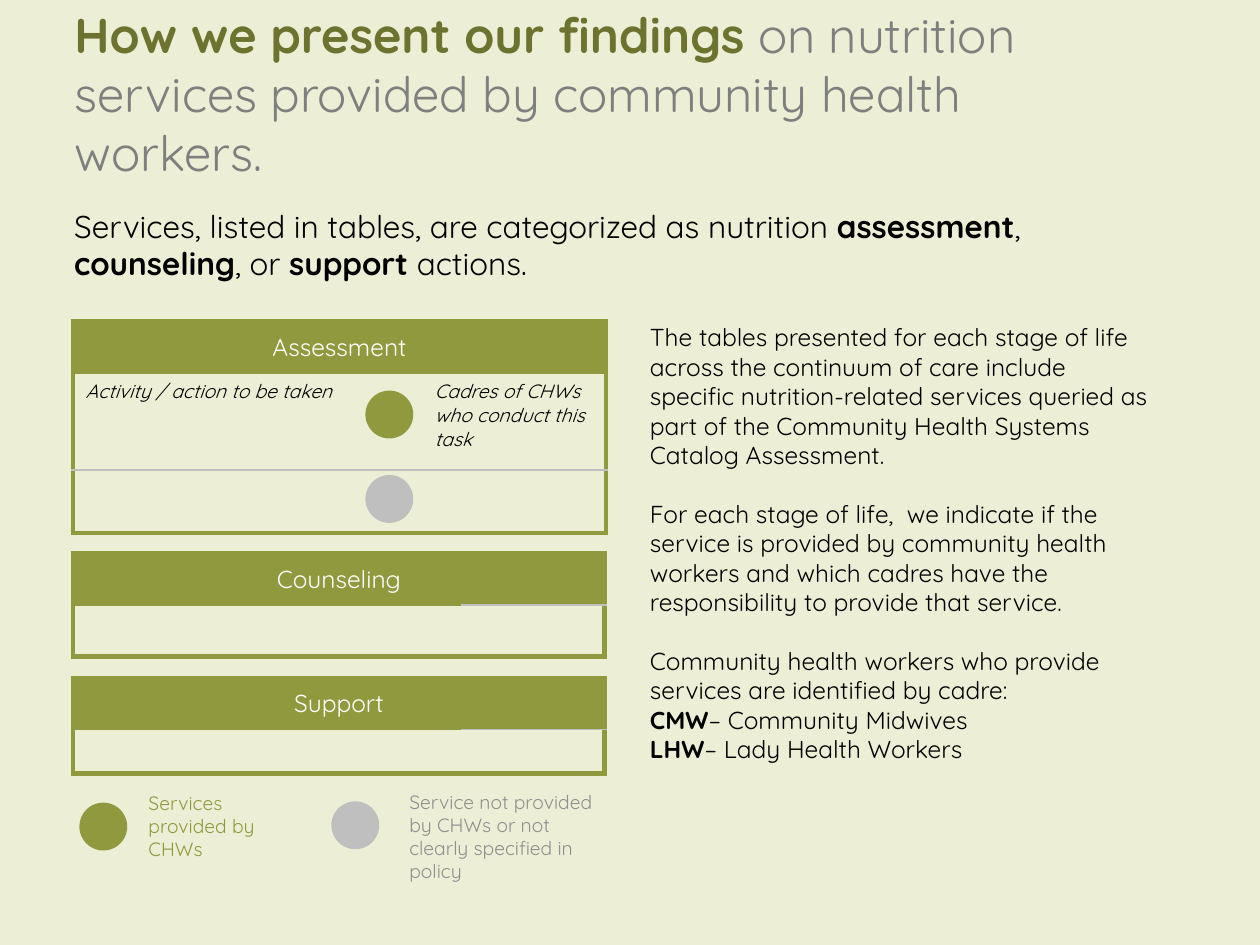
import pptx
import pptx.util
from lxml import etree
from pptx.dml.color import RGBColor
from pptx.enum.shapes import MSO_SHAPE
from pptx.enum.text import MSO_ANCHOR, MSO_AUTO_SIZE, PP_ALIGN
from pptx.oxml.ns import qn
from pptx.util import Inches, Pt

FONT = "Quicksand"
CREAM = RGBColor(0xEC, 0xEE, 0xD5)
GREEN = RGBColor(0x91, 0x99, 0x3E)
DARK_GREEN = RGBColor(0x6D, 0x73, 0x2F)
LIGHT_GRAY = RGBColor(0xBF, 0xBF, 0xBF)
LABEL_GRAY = RGBColor(0x8F, 0x8F, 0x8F)
TITLE_GRAY = RGBColor(0x7F, 0x7F, 0x7F)
BLACK = RGBColor(0, 0, 0)
WHITE = RGBColor(0xFF, 0xFF, 0xFF)

# A paragraph is a list of (text, bold) runs.
TITLE = [("How we present our findings ", True),
         ("on nutrition services provided by community health workers.", False)]
INTRO = [("Services, listed in tables, are categorized as nutrition ", False),
         ("assessment", True), (", ", False), ("counseling", True),
         (", or ", False), ("support ", True), ("actions.", False)]
EXPLANATION = [
    [("The tables presented for each stage of life across the continuum of care "
      "include specific nutrition-related services queried as part of the "
      "Community Health Systems Catalog Assessment.", False)],
    [("For each stage of life,  we indicate if the service is provided by community "
      "health workers and which cadres have the responsibility to provide that "
      "service.", False)],
    [("Community health workers who provide services are identified by cadre:", False)],
    [("CMW", True), ("– Community Midwives", False)],
    [("LHW", True), ("– Lady Health Workers", False)],
]
GAP_BEFORE = (1, 2)  # paragraphs of the explanation set apart from the one above

TABLE_LEFT = 0.58
# heading, top, column widths, row heights, body rows
TABLES = [
    ("Assessment", 2.55, [2.27, 0.5, 1.46], [0.41, 0.77, 0.5],
     [["Activity / action to be taken", "", "Cadres of CHWs who conduct this task"],
      ["", "", ""]]),
    ("Counseling", 4.39, [3.08, 1.14], [0.41, 0.41], [["", ""]]),
    ("Support", 5.38, [3.08, 1.14], [0.41, 0.35], [["", ""]]),
]

DOT_SIZE = 0.38
DOTS = [(2.9, 3.1, GREEN), (2.9, 3.77, LIGHT_GRAY),
        (0.63, 6.37, GREEN), (2.63, 6.36, LIGHT_GRAY)]
LEGEND = [
    ("Services provided by CHWs", (1.08, 6.23, 1.35, 0.66), GREEN),
    ("Service not provided by CHWs or not clearly specified in policy",
     (3.15, 6.22, 1.75, 0.66), LABEL_GRAY),
]


def style(paragraph, size, color):
    paragraph.font.name = FONT
    paragraph.font.size = Pt(size)
    paragraph.font.color.rgb = color


def add_runs(paragraph, runs):
    for text, bold in runs:
        run = paragraph.add_run()
        run.text = text
        run.font.bold = bold


def add_text(slide, box, paragraphs, size, color, gap_before=()):
    frame = slide.shapes.add_textbox(*map(Inches, box)).text_frame
    frame.word_wrap = True
    for index, runs in enumerate(paragraphs):
        paragraph = frame.add_paragraph() if index else frame.paragraphs[0]
        add_runs(paragraph, runs)
        style(paragraph, size, color)
        if index in gap_before:
            paragraph.space_before = Pt(size * 1.2)


def set_borders(cell, left, right, top, bottom):
    """Each side is (color, points), or None for no line."""
    properties = cell._tc.get_or_add_tcPr()
    for tag, side in zip(("lnL", "lnR", "lnT", "lnB"), (left, right, top, bottom)):
        line = etree.SubElement(properties, qn("a:" + tag))
        if side is None:
            etree.SubElement(line, qn("a:noFill"))
            continue
        color, width = side
        line.set("w", str(Pt(width)))
        fill = etree.SubElement(line, qn("a:solidFill"))
        etree.SubElement(fill, qn("a:srgbClr")).set("val", str(color))


def add_service_table(slide, heading, top, widths, heights, body):
    frame = slide.shapes.add_table(
        len(heights), len(widths), Inches(TABLE_LEFT), Inches(top),
        Inches(sum(widths)), Inches(sum(heights)))
    table = frame.table
    table.first_row = table.horz_banding = False
    for column, width in zip(table.columns, widths):
        column.width = Inches(width)
    for row, height in zip(table.rows, heights):
        row.height = Inches(height)

    outer, under_heading, divider = (GREEN, 3), (GREEN, 1), (LIGHT_GRAY, 1)
    header = table.cell(0, 0)
    header.merge(table.cell(0, len(widths) - 1))
    header.text = heading
    header.vertical_anchor = MSO_ANCHOR.MIDDLE
    header.text_frame.paragraphs[0].alignment = PP_ALIGN.CENTER
    style(header.text_frame.paragraphs[0], 14, WHITE)
    set_borders(header, outer, outer, outer, under_heading)
    header.fill.solid()
    header.fill.fore_color.rgb = GREEN

    last_column, last_row = len(widths) - 1, len(body)
    for r, texts in enumerate(body, start=1):
        for c, text in enumerate(texts):
            cell = table.cell(r, c)
            # Single-row tables have a gray line above their last column
            gray_top = r > 1 or (last_row == 1 and c == last_column)
            set_borders(cell,
                        outer if c == 0 else None,
                        outer if c == last_column else None,
                        divider if gray_top else under_heading,
                        outer if r == last_row else divider)
            cell.fill.background()
            if text:
                cell.text = text
                style(cell.text_frame.paragraphs[0], 11, BLACK)
                cell.text_frame.paragraphs[0].font.italic = True
            else:
                cell.margin_top = cell.margin_bottom = 0


def add_dot(slide, left, top, color):
    dot = slide.shapes.add_shape(MSO_SHAPE.OVAL, Inches(left), Inches(top),
                                 Inches(DOT_SIZE), Inches(DOT_SIZE))
    dot.shadow.inherit = False
    dot.fill.solid()
    dot.fill.fore_color.rgb = color
    dot.line.fill.background()


def add_title(slide):
    title = slide.shapes.title
    title.left, title.top, title.width, title.height = map(Inches, (0.49, 0.4, 8.76, 0.68))
    frame = title.text_frame
    frame.word_wrap = True
    frame.auto_size = MSO_AUTO_SIZE.NONE
    frame.vertical_anchor = MSO_ANCHOR.MIDDLE
    heading = frame.paragraphs[0]
    heading.alignment = PP_ALIGN.LEFT
    add_runs(heading, TITLE)
    style(heading, 28, TITLE_GRAY)
    heading.runs[0].font.color.rgb = DARK_GREEN


def main():
    deck = pptx.Presentation()
    deck.slide_width, deck.slide_height = Inches(10), Inches(7.5)
    slide = deck.slides.add_slide(deck.slide_layouts.get_by_name("Title Only"))
    slide.background.fill.solid()
    slide.background.fill.fore_color.rgb = CREAM

    add_title(slide)
    add_text(slide, (0.49, 1.59, 7.76, 0.71), [INTRO], 18, BLACK)
    add_text(slide, (5.06, 2.51, 4.19, 3.64), EXPLANATION, 14, BLACK, GAP_BEFORE)
    for service_table in TABLES:
        add_service_table(slide, *service_table)
    for dot in DOTS:
        add_dot(slide, *dot)
    for label, box, color in LEGEND:
        add_text(slide, box, [[(label, False)]], 11, color)
    deck.save("out.pptx")


if __name__ == "__main__":
    main()
